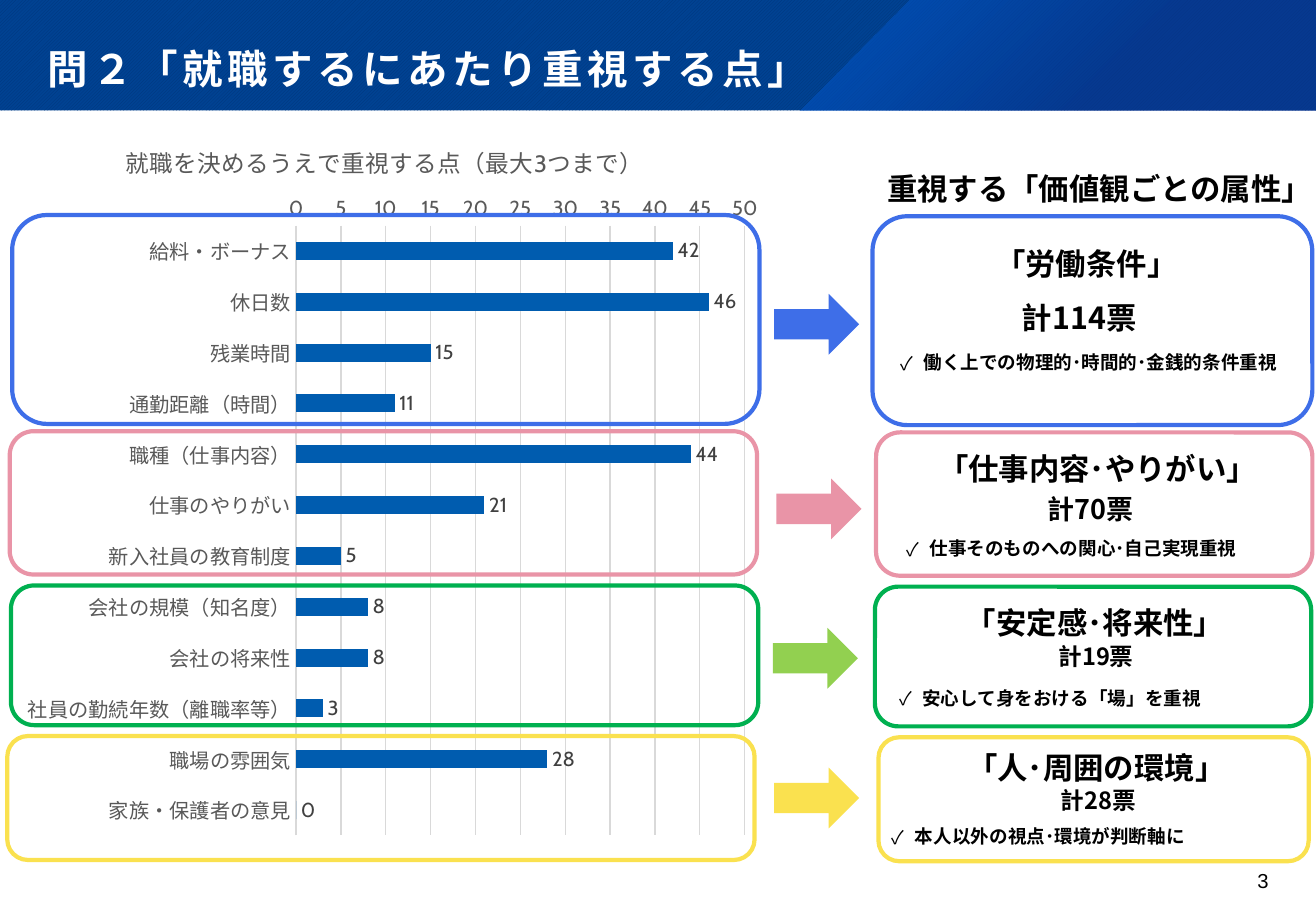
from dataclasses import dataclass

from lxml.etree import SubElement
from pptx import Presentation
from pptx.chart.data import CategoryChartData
from pptx.dml.color import RGBColor
from pptx.enum.chart import XL_CHART_TYPE as ChartType, XL_LABEL_POSITION as LabelPosition
from pptx.enum.chart import XL_TICK_MARK as TickMark
from pptx.enum.dml import MSO_PATTERN as Pattern
from pptx.enum.shapes import MSO_SHAPE as Preset
from pptx.enum.text import MSO_ANCHOR as Anchor, MSO_AUTO_SIZE as AutoSize, PP_ALIGN as Align
from pptx.oxml import parse_xml
from pptx.oxml.ns import nsdecls, qn
from pptx.util import Inches, Pt

COLUMNS, ROWS = 108.3, 75


@dataclass(frozen=True)
class Theme:
    white: str = "FFFFFF"
    black: str = "000000"
    band: str = "004292"
    band_stripe: str = "003579"
    glow_start: str = "0064DF"
    glow_end: str = "0C338E"
    bar: str = "005CAF"
    grid: str = "D9D9D9"
    axis_text: str = "595959"
    label_text: str = "404040"
    blue: str = "3E6EE8"
    pink: str = "E994A7"
    green: str = "00B050"
    lime: str = "92D050"
    yellow: str = "FAE14F"
    display_font: str = "Cabin"
    body_font: str = "Noto Sans CJK JP"
    number_font: str = "Arial"
    title_size: int = 24
    heading_size: int = 18
    chart_title_size: int = 14
    small_size: int = 12
    note_size: int = 11
    frame_width: float = 2.5
    hairline: float = 0.75


@dataclass(frozen=True)
class ValueGroup:
    """One group of values; boxes are (column, row, width, height), points (column, row)."""
    color: str
    arrow_color: str
    bars_frame: tuple
    arrow_at: tuple
    card_frame: tuple
    heading: str
    heading_at: tuple
    votes: str
    votes_size: int
    votes_at: tuple
    note: str
    note_at: tuple


THEME = Theme()
GROUPS = [
    ValueGroup(THEME.blue, THEME.blue, (1, 17.7, 61.5, 17.2), (63.7, 24.2), (71.8, 17.8, 36.2, 17.2),
               "「労働条件」", (80.5, 18.7), "計114票", 18, (82.7, 23.1),
               "働く上での物理的･時間的･金銭的条件重視", (72.8, 28)),
    ValueGroup(THEME.pink, THEME.pink, (0.8, 35.5, 61.5, 11.8), (63.9, 39.4), (72.1, 35.6, 35.9, 11.8),
               "「仕事内容･やりがい」", (75.8, 35.6), "計70票", 16, (84.8, 39.2),
               "仕事そのものへの関心･自己実現重視", (73.3, 43.3)),
    ValueGroup(THEME.green, THEME.lime, (0.9, 48.2, 61.5, 11.5), (63.6, 51.7), (72, 48.3, 35.9, 11.5),
               "「安定感･将来性」", (78.1, 48.2), "計19票", 14, (85.7, 51.7),
               "安心して身をおける「場」を重視", (72.7, 55.6)),
    ValueGroup(THEME.yellow, THEME.yellow, (0.6, 60.6, 61.5, 10.2), (63.7, 63.2), (72.3, 60.7, 35.4, 10.2),
               "「人･周囲の環境」", (78.2, 60.2), "計28票", 14, (85.9, 63.5),
               "本人以外の視点･環境が判断軸に", (72.1, 67)),
]
VOTES = {
    "給料・ボーナス": 42, "休日数": 46, "残業時間": 15, "通勤距離（時間）": 11,
    "職種（仕事内容）": 44, "仕事のやりがい": 21, "新入社員の教育制度": 5,
    "会社の規模（知名度）": 8, "会社の将来性": 8, "社員の勤続年数（離職率等）": 3,
    "職場の雰囲気": 28, "家族・保護者の意見": 0,
}


def rgb(color):
    return RGBColor.from_string(color)


def grid(*cells):
    """Turn columns or rows into slide lengths."""
    return [Inches(cell / 10) for cell in cells]


def style_font(font, size, color, name, bold=False):
    font.size, font.name, font.bold = Pt(size), name, bold
    font.color.rgb = rgb(color)


def place_in_chart(parent, **shares):
    """Fix a chart part's place, in shares of the chart's size."""
    layout = parent.find(qn("c:layout"))
    if layout is None:
        layout = parent.makeelement(qn("c:layout"))
        parent.insert(0 if parent.find(qn("c:tx")) is None else 1, layout)
    manual = SubElement(layout, qn("c:manualLayout"))
    if "w" in shares:
        SubElement(manual, qn("c:layoutTarget")).set("val", "inner")
    for side in ("x", "y"):
        SubElement(manual, qn(f"c:{side}Mode")).set("val", "edge")
    for side, share in shares.items():
        SubElement(manual, qn(f"c:{side}")).set("val", str(share))


class SlideBuilder:
    def __init__(self, slide, theme):
        self.slide, self.theme = slide, theme

    def shape(self, preset, box, fill=None, line=None):
        shape = self.slide.shapes.add_shape(preset, *grid(*box))
        shape.shadow.inherit = False
        if fill:
            shape.fill.solid()
            shape.fill.fore_color.rgb = rgb(fill)
        else:
            shape.fill.background()
        if line:
            shape.line.color.rgb = rgb(line)
            shape.line.width = Pt(self.theme.frame_width)
        else:
            shape.line.fill.background()
        return shape

    def banner(self, height):
        theme = self.theme
        band = self.shape(Preset.RECTANGLE, (0, 0, COLUMNS, height))
        band.fill.patterned()
        band.fill.pattern = Pattern.DARK_UPWARD_DIAGONAL
        band.fill.fore_color.rgb = rgb(theme.band_stripe)
        band.fill.back_color.rgb = rgb(theme.band)

        builder = self.slide.shapes.build_freeform(*grid(74.9, 0))
        builder.add_line_segments(
            [grid(*point) for point in ((COLUMNS, 0), (COLUMNS, height), (65.8, height))])
        glow = builder.convert_to_shape()
        glow.shadow.inherit = False
        glow.line.fill.background()
        glow.fill.background()
        no_fill = glow.element.spPr.find(qn("a:noFill"))
        stops = "".join(
            f'<a:gs pos="{place}000"><a:srgbClr val="{color}"><a:alpha val="{alpha}000"/></a:srgbClr></a:gs>'
            for place, color, alpha in ((0, theme.glow_start, 50), (62, theme.glow_end, 55)))
        no_fill.getparent().replace(no_fill, parse_xml(
            f'<a:gradFill {nsdecls("a")}><a:gsLst>{stops}</a:gsLst><a:path path="circle">'
            '<a:fillToRect r="100000" b="100000"/></a:path></a:gradFill>'))

    def title(self, text, height):
        title = self.slide.shapes.title
        title.element.getparent().append(title.element)  # in front of the banner
        title.left, title.top, title.width, title.height = grid(0, 0, COLUMNS, height)
        frame = title.text_frame
        frame.text = text
        frame.auto_size, frame.vertical_anchor = AutoSize.NONE, Anchor.BOTTOM
        frame.margin_left, frame.margin_top, frame.margin_right, frame.margin_bottom = grid(3.9, 3.6, 3.6, 1.4)
        paragraph = frame.paragraphs[0]
        paragraph.alignment, paragraph.line_spacing = Align.LEFT, 0.9
        font = paragraph.runs[0].font
        style_font(font, self.theme.title_size, self.theme.white, self.theme.display_font, True)
        paragraph.runs[0]._r.get_or_add_rPr().set("spc", "270")

    def text(self, text, box, size, font=None, bold=True, margin=0.4):
        font = font or self.theme.body_font
        frame = self.slide.shapes.add_textbox(*grid(*box)).text_frame
        frame.word_wrap = True
        frame.margin_left = frame.margin_right = grid(margin)[0]
        frame.margin_top = frame.margin_bottom = 0
        frame.text = text
        paragraph = frame.paragraphs[0]
        run = paragraph.runs[0]
        style_font(run.font, size, self.theme.black, font, bold)
        SubElement(run._r.get_or_add_rPr(), qn("a:ea")).set("typeface", font)
        return paragraph

    def spaced_text(self, text, box, size, indent=(1, 0), bullet=None):
        paragraph = self.text(text, box, size)
        paragraph.line_spacing, paragraph.space_after = 1.5, Pt(7)
        properties = paragraph._p.get_or_add_pPr()
        for name, length in zip(("marL", "indent"), grid(*indent)):
            properties.set(name, str(int(length)))
        if bullet:
            SubElement(properties, qn("a:buFont")).set("typeface", self.theme.body_font)
            SubElement(properties, qn("a:buChar")).set("char", bullet)

    def bar_chart(self, title, values, box):
        theme = self.theme
        data = CategoryChartData()
        data.categories = list(values)
        data.add_series("Series 1", list(values.values()))
        chart = self.slide.shapes.add_chart(ChartType.BAR_CLUSTERED, *grid(*box), data).chart
        chart.has_legend = False
        style_font(chart.font, 10, theme.black, theme.display_font)
        chart.chart_title.text_frame.text = title
        style_font(chart.chart_title.text_frame.paragraphs[0].runs[0].font,
                   theme.chart_title_size, theme.axis_text, theme.display_font)
        place_in_chart(chart.element.find(".//" + qn("c:title")), x=0.14, y=0.03)
        place_in_chart(chart.element.find(".//" + qn("c:plotArea")), x=0.37, y=0.15, w=0.59, h=0.83)

        category_axis, value_axis = chart.category_axis, chart.value_axis
        for axis in (category_axis, value_axis):
            axis.major_tick_mark = axis.minor_tick_mark = TickMark.NONE
            style_font(axis.tick_labels.font, theme.small_size, theme.axis_text, theme.display_font)
        category_axis.reverse_order = True
        value_axis.minimum_scale, value_axis.maximum_scale, value_axis.major_unit = 0, 50, 5
        for line in (category_axis.format.line, value_axis.major_gridlines.format.line):
            line.color.rgb = rgb(theme.grid)
            line.width = Pt(theme.hairline)
        value_axis.format.line.fill.background()

        plot = chart.plots[0]
        plot.gap_width, plot.vary_by_categories = 182, False
        bars = plot.series[0].format.fill
        bars.solid()
        bars.fore_color.rgb = rgb(theme.bar)
        plot.has_data_labels = True
        labels = plot.data_labels
        labels.show_value, labels.position = True, LabelPosition.OUTSIDE_END
        style_font(labels.font, theme.small_size, theme.label_text, theme.display_font)

    def value_group(self, group):
        self.shape(Preset.ROUNDED_RECTANGLE, group.bars_frame, line=group.color)
        self.shape(Preset.RIGHT_ARROW, (*group.arrow_at, 7, 5), fill=group.arrow_color)
        self.shape(Preset.ROUNDED_RECTANGLE, group.card_frame, line=group.color)
        self.spaced_text(group.heading, (*group.heading_at, 29.7, 4.2), self.theme.heading_size)
        self.spaced_text(group.votes, (*group.votes_at, 22, 4.2), group.votes_size)
        self.spaced_text(group.note, (*group.note_at, 33.5, 2.5), self.theme.note_size, (2.8, -1.9), "✓")


def main():
    presentation = Presentation()
    presentation.slide_width, presentation.slide_height = grid(COLUMNS, ROWS)
    builder = SlideBuilder(presentation.slides.add_slide(presentation.slide_layouts[5]), THEME)
    builder.banner(9.1)
    builder.title("問２「就職するにあたり重視する点」", 9.1)
    builder.bar_chart("就職を決めるうえで重視する点（最大3つまで）", VOTES, (1.2, 9.5, 62.6, 60.5))
    builder.spaced_text("重視する「価値観ごとの属性」", (71.6, 12.5, 37.6, 4.2), THEME.heading_size)
    for group in GROUPS:
        builder.value_group(group)
    number = builder.text("3", (97.5, 71.5, 6.9, 3), THEME.small_size, THEME.number_font, False, 0)
    number.alignment = Align.RIGHT
    presentation.save("out.pptx")


if __name__ == "__main__":
    main()
